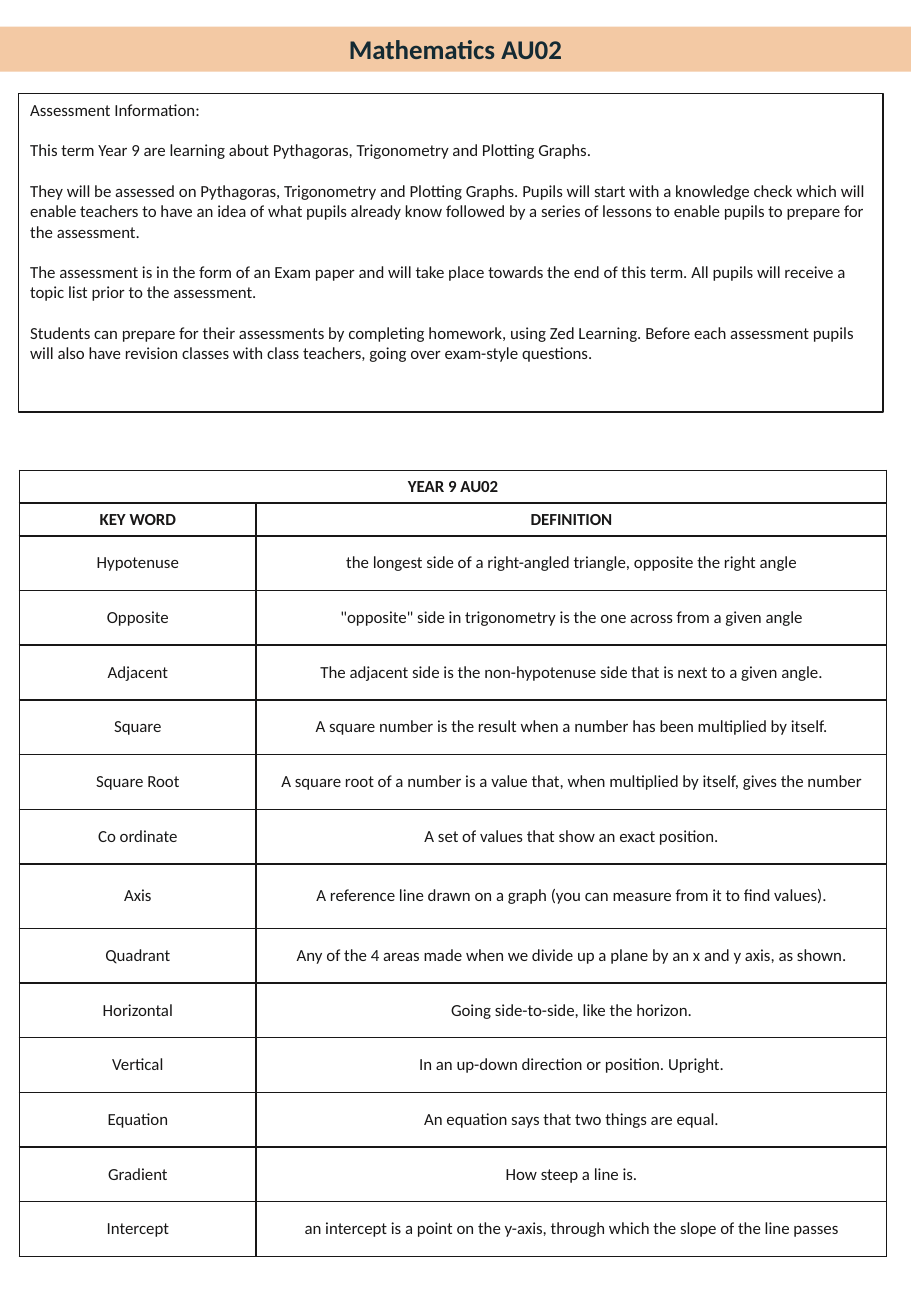
from lxml.etree import SubElement
from pptx import Presentation
from pptx.dml.color import RGBColor
from pptx.enum.shapes import MSO_SHAPE
from pptx.enum.text import MSO_ANCHOR, PP_ALIGN
from pptx.oxml.ns import qn
from pptx.util import Inches, Pt

PEACH = RGBColor(0xF3, 0xC9, 0xA4)
NAVY = RGBColor(0x14, 0x2A, 0x33)
INK = RGBColor(0x18, 0x17, 0x17)
FONT = "Calibri"

ASSESSMENT = [
    "Assessment Information:",
    "This term Year 9 are learning about Pythagoras, Trigonometry and Plotting Graphs.",
    "They will be assessed on Pythagoras, Trigonometry and Plotting Graphs. Pupils will start "
    "with a knowledge check which will enable teachers to have an idea of what pupils already "
    "know followed by a series of lessons to enable pupils to prepare for the assessment.",
    "The assessment is in the form of an Exam paper and will take place towards the end of this "
    "term. All pupils will receive a topic list prior to the assessment.",
    "Students can prepare for their assessments by completing homework, using Zed Learning. "
    "Before each assessment pupils will also have revision classes with class teachers, going "
    "over exam-style questions.",
]

KEY_WORDS = [
    ("Hypotenuse", "the longest side of a right-angled triangle, opposite the right angle"),
    ("Opposite", '"opposite" side in trigonometry is the one across from a given angle'),
    ("Adjacent", "The adjacent side is the non-hypotenuse side that is next to a given angle."),
    ("Square", "A square number is the result when a number has been multiplied by itself."),
    ("Square Root", "A square root of a number is a value that, when multiplied by itself, "
                    "gives the number"),
    ("Co ordinate", "A set of values that show an exact position."),
    ("Axis", "A reference line drawn on a graph (you can measure from it to find values)."),
    ("Quadrant", "Any of the 4 areas made when we divide up a plane by an x and y axis, as shown."),
    ("Horizontal", "Going side-to-side, like the horizon."),
    ("Vertical", "In an up-down direction or position. Upright."),
    ("Equation", "An equation says that two things are equal."),
    ("Gradient", "How steep a line is."),
    ("Intercept", "an intercept is a point on the y-axis, through which the slope of the line passes"),
]
HEADER_ROWS = [("YEAR 9 AU02", ""), ("KEY WORD", "DEFINITION")]
HEADER_HEIGHT, ROW_HEIGHT, AXIS_HEIGHT = 0.27, 0.45, 0.53
KEY_WORD_SHARE = 0.273


def format_paragraph(paragraph, size, color, bold=False, alignment=PP_ALIGN.CENTER):
    paragraph.alignment = alignment
    for run in paragraph.runs:
        run.font.name = FONT
        run.font.size = Pt(size)
        run.font.bold = bold
        run.font.color.rgb = color


def add_rectangle(slide, left, top, width, height):
    shape = slide.shapes.add_shape(MSO_SHAPE.RECTANGLE, Inches(left), Inches(top),
                                   Inches(width), Inches(height))
    shape.shadow.inherit = False
    shape.text_frame.word_wrap = True
    return shape


def add_title_band(slide, left, top, width, height):
    band = add_rectangle(slide, left, top, width, height)
    band.fill.solid()
    band.fill.fore_color.rgb = PEACH
    band.line.fill.background()
    band.text_frame.text = "Mathematics AU02"
    format_paragraph(band.text_frame.paragraphs[0], 16, NAVY, bold=True)


def add_assessment_box(slide, left, top, width, height):
    box = add_rectangle(slide, left, top, width, height)
    box.fill.background()
    box.line.color.rgb = INK
    box.line.width = Pt(0.75)
    frame = box.text_frame
    frame.vertical_anchor = MSO_ANCHOR.TOP
    frame.text = "\n".join(ASSESSMENT)
    for index, paragraph in enumerate(frame.paragraphs):
        format_paragraph(paragraph, 10, INK, alignment=PP_ALIGN.LEFT)
        if index:
            paragraph.space_before = Pt(12)


def set_borders(cell):
    properties = cell._tc.get_or_add_tcPr()
    for side in ("a:lnL", "a:lnR", "a:lnT", "a:lnB"):
        line = SubElement(properties, qn(side), w=str(Pt(1)))
        fill = SubElement(line, qn("a:solidFill"))
        SubElement(fill, qn("a:srgbClr"), val=str(INK))


def format_cell(cell, text, is_header):
    cell.text = text
    cell.vertical_anchor = MSO_ANCHOR.MIDDLE
    cell.margin_left = cell.margin_right = Inches(0.08 if is_header else 0.07)
    cell.margin_top = cell.margin_bottom = Inches(0.04 if is_header else 0.05)
    format_paragraph(cell.text_frame.paragraphs[0], 10, INK, bold=is_header)
    set_borders(cell)
    cell.fill.background()


def add_key_word_table(slide, left, top, width):
    rows = HEADER_ROWS + KEY_WORDS
    heights = [HEADER_HEIGHT] * len(HEADER_ROWS) + [
        AXIS_HEIGHT if word == "Axis" else ROW_HEIGHT for word, _ in KEY_WORDS]
    table = slide.shapes.add_table(len(rows), 2, Inches(left), Inches(top),
                                   Inches(width), Inches(sum(heights))).table
    table.first_row = table.horz_banding = False
    for column, share in zip(table.columns, (KEY_WORD_SHARE, 1 - KEY_WORD_SHARE)):
        column.width = Inches(width * share)
    for row_index, (texts, height) in enumerate(zip(rows, heights)):
        table.rows[row_index].height = Inches(height)
        for column_index, text in enumerate(texts):
            format_cell(table.cell(row_index, column_index), text,
                        row_index < len(HEADER_ROWS))
    table.cell(0, 0).merge(table.cell(0, 1))


def main():
    presentation = Presentation()
    presentation.slide_width = Inches(7.5)
    presentation.slide_height = Inches(10.83)
    slide = presentation.slides.add_slide(presentation.slide_layouts[6])
    add_title_band(slide, 0, 0.22, 7.5, 0.37)
    add_assessment_box(slide, 0.15, 0.77, 7.12, 2.62)
    add_key_word_table(slide, 0.16, 3.87, 7.14)
    presentation.save("out.pptx")


if __name__ == "__main__":
    main()
